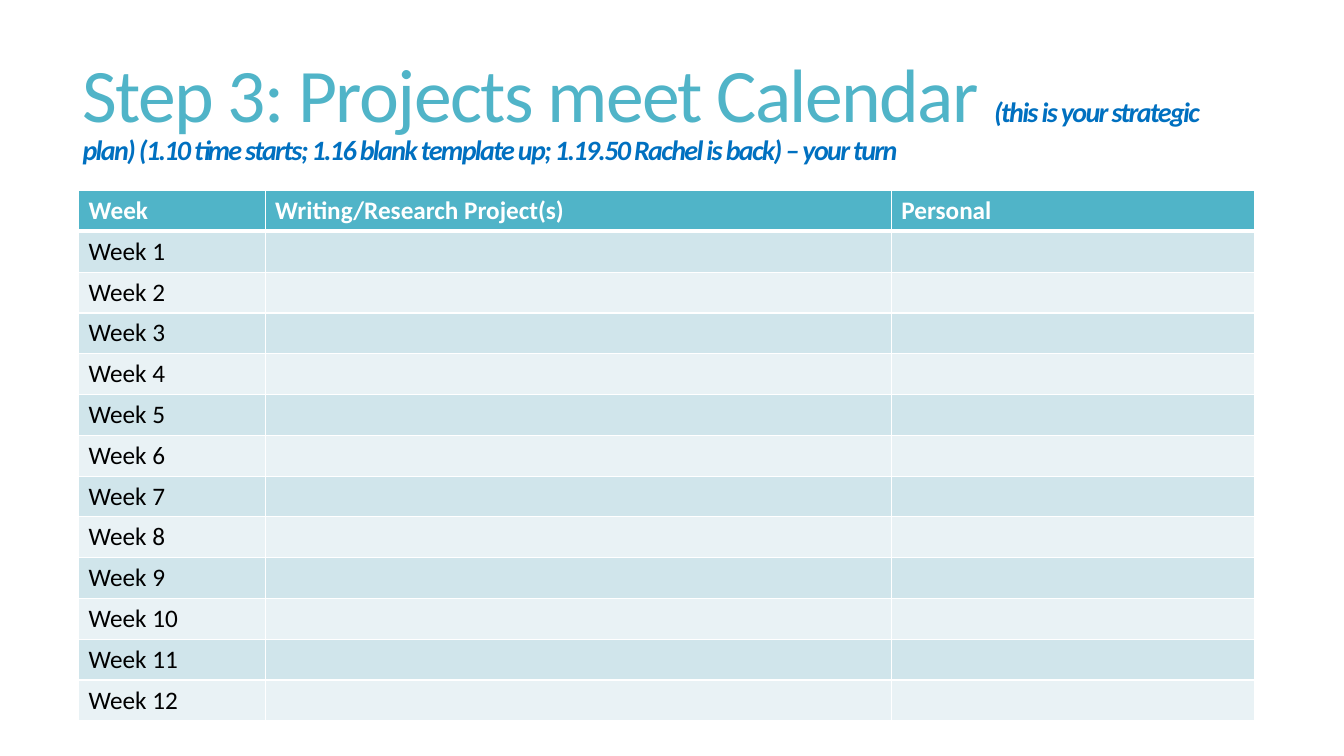
from pptx import Presentation
from pptx.dml.color import RGBColor
from pptx.enum import text
from pptx.oxml import parse_xml
from pptx.oxml.ns import nsdecls
from pptx.util import Inches, Pt

TEAL, BLUE, WHITE, BLACK = "50B4C8", "0070C0", "FFFFFF", "000000"
BANDS = ["E9F2F5", "D0E5EB"]
HEADS = ["Week", "Writing/Research Project(s)", "Personal"]
WIDTHS = [1.85, 6.21, 3.6]
WEEKS = 12
ROW = 0.405


def color(code):
    return RGBColor.from_string(code)


def write(para, words, size=18, ink=BLACK, bold=False, italic=False, space=None):
    run = para.add_run()
    run.text = words
    font = run.font
    font.name = "Calibri"
    font.size = Pt(size)
    font.bold = bold
    font.italic = italic
    font.color.rgb = color(ink)
    if space is not None:
        run._r.get_or_add_rPr().set("spc", str(round(space * 100)))


def border(cell, **widths):
    props = cell._tc.get_or_add_tcPr()
    for side in "LRTB":
        width = Pt(widths.get(side, 1))
        props.append(parse_xml(
            f'<a:ln{side} {nsdecls("a")} w="{width}"><a:solidFill>'
            f'<a:srgbClr val="{WHITE}"/></a:solidFill></a:ln{side}>'))


def paint(cell, code):
    cell.fill.solid()
    cell.fill.fore_color.rgb = color(code)


def title(slide):
    box = slide.shapes.add_textbox(Inches(0.72), Inches(0.55), Inches(11.78), Inches(1.15))
    frame = box.text_frame
    frame.word_wrap = True
    frame.vertical_anchor = text.MSO_ANCHOR.MIDDLE
    para = frame.paragraphs[0]
    para.line_spacing = 0.85
    write(para, "Step 3: Projects meet Calendar ", size=54, ink=TEAL, space=-1.2)
    write(para, "(this is your strategic plan) (1.10 time starts; 1.16 blank template up; "
          "1.19.50 Rachel is back) – your turn",
          size=20, ink=BLUE, bold=True, italic=True, space=-1.2)


def planner(slide):
    count = WEEKS + 1
    grid = slide.shapes.add_table(
        count, len(HEADS), Inches(0.78), Inches(1.89),
        Inches(sum(WIDTHS)), Inches(ROW * count)).table
    for col, width in zip(grid.columns, WIDTHS):
        col.width = Inches(width)
    for row in grid.rows:
        row.height = Inches(ROW)
    for c, head in enumerate(HEADS):
        cell = grid.cell(0, c)
        border(cell, B=3)
        paint(cell, TEAL)
        write(cell.text_frame.paragraphs[0], head, ink=WHITE, bold=True)
    for week in range(1, count):
        for c in range(len(HEADS)):
            cell = grid.cell(week, c)
            border(cell, T=3 if week == 1 else 1)
            paint(cell, BANDS[week % 2])
        write(grid.cell(week, 0).text_frame.paragraphs[0], f"Week {week}")


def main():
    deck = Presentation()
    deck.slide_width = Inches(13.33)
    deck.slide_height = Inches(7.5)
    slide = deck.slides.add_slide(deck.slide_layouts[6])
    title(slide)
    planner(slide)
    deck.save("out.pptx")


if __name__ == "__main__":
    main()
